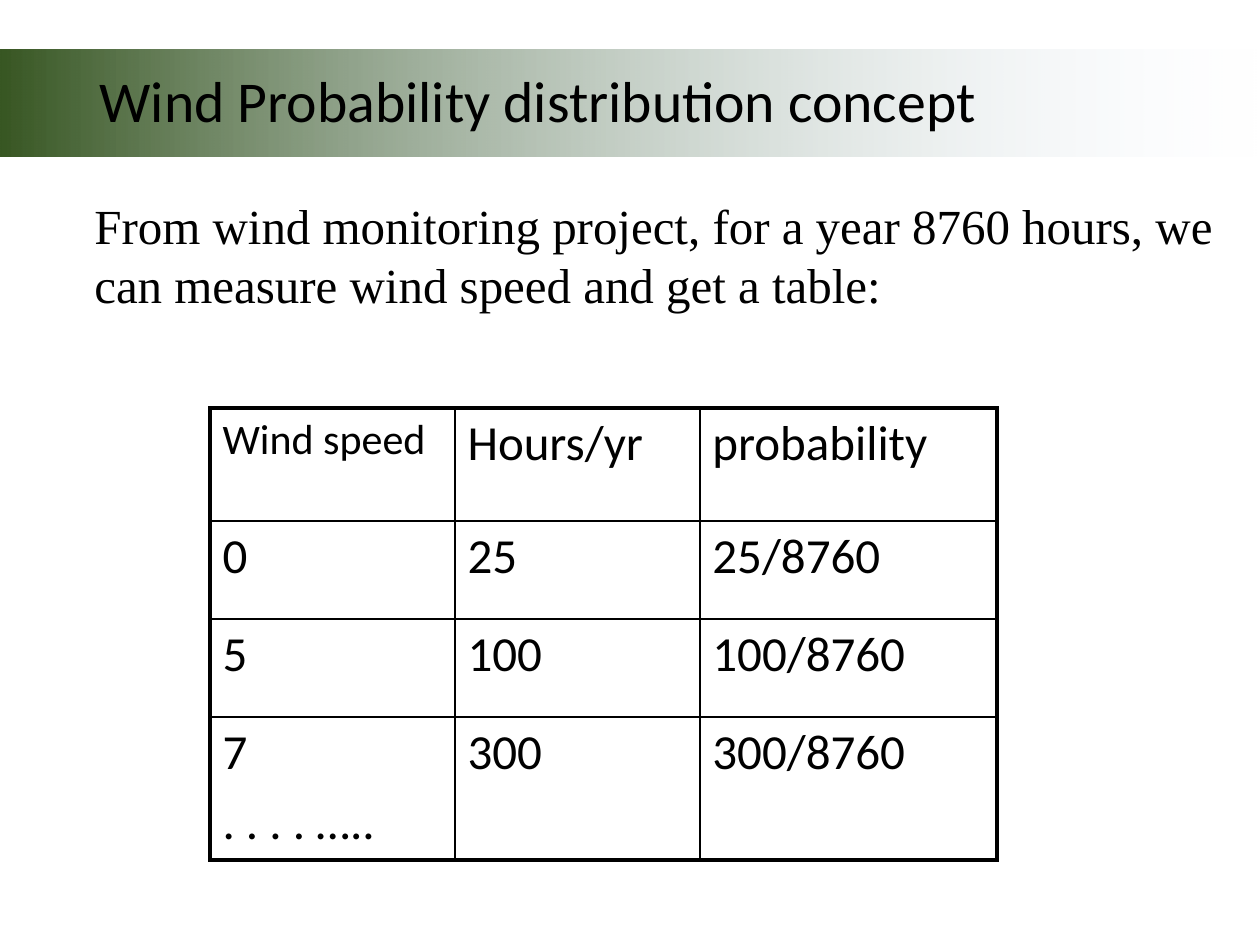
from lxml.etree import SubElement
from pptx import Presentation
from pptx.dml.color import RGBColor
from pptx.enum.shapes import MSO_SHAPE
from pptx.enum.text import MSO_ANCHOR, PP_ALIGN
from pptx.oxml.ns import qn
from pptx.util import Emu, Pt

COLORS = {"ink": "000000", "green": "385723", "mist": "E1EBFB"}
PX_PER_INCH = 126
THIN, THICK = 1, 2.25
ROWS = [
    ["Wind speed", "Hours/yr", "probability"],
    ["0", "25", "25/8760"],
    ["5", "100", "100/8760"],
    ["7\n. . . . …..", "300", "300/8760"],
]
COL_WIDTHS = [245, 245, 297]
ROW_HEIGHTS = [113, 98, 98, 143]


def px(n):
    return Emu(round(n * 914400 / PX_PER_INCH))


def box(*lengths):
    return [px(n) for n in lengths]


def rgb(name):
    return RGBColor.from_string(COLORS[name])


def write(tf, text, size=28, font="Calibri", color="ink", before=0.2,
          spacing=None, anchor=MSO_ANCHOR.TOP):
    """Fill a text frame, one paragraph per line; before is a share of size."""
    tf.word_wrap = True
    tf.vertical_anchor = anchor
    for i, line in enumerate(text.split("\n")):
        p = tf.add_paragraph() if i else tf.paragraphs[0]
        p.alignment = PP_ALIGN.LEFT
        p.space_before = Pt(size * before)
        if spacing:
            p.line_spacing = spacing
        r = p.add_run()
        r.text = line
        r.font.size = Pt(size)
        r.font.name = font
        r.font.color.rgb = rgb(color)


def add_band(s):
    """Add a band behind the title that fades to transparent."""
    sp = s.shapes.add_shape(MSO_SHAPE.RECTANGLE, *box(0, 50, 1260, 107))
    sp.shadow.inherit = False
    sp.line.fill.background()
    sp.fill.gradient()
    sp.fill.gradient_angle = 0
    for stop, name in zip(sp.fill.gradient_stops, ("green", "mist")):
        stop.color.rgb = rgb(name)
    last = sp._element.spPr.findall(".//" + qn("a:srgbClr"))[-1]
    SubElement(last, qn("a:alpha"), val="0")
    s.shapes._spTree.insert(2, sp._element)


def set_title(s, text):
    title = s.shapes.title
    title.left, title.top, title.width, title.height = box(87, 50, 1086, 107)
    write(title.text_frame, text, size=33, before=0, spacing=0.9,
          anchor=MSO_ANCHOR.MIDDLE)


def set_borders(cell, **widths):
    tc_pr = cell._tc.get_or_add_tcPr()
    for side, width in widths.items():
        ln = SubElement(tc_pr, qn("a:ln" + side), w=str(Pt(width)))
        fill = SubElement(ln, qn("a:solidFill"))
        SubElement(fill, qn("a:srgbClr"), val=COLORS["ink"])


def add_wind_table(s, left, top):
    n_rows, n_cols = len(ROWS), len(COL_WIDTHS)
    table = s.shapes.add_table(
        n_rows, n_cols,
        *box(left, top, sum(COL_WIDTHS), sum(ROW_HEIGHTS))).table
    table.first_row = table.horz_banding = False
    for col, width in zip(table.columns, COL_WIDTHS):
        col.width = px(width)
    for i, (row, height) in enumerate(zip(ROWS, ROW_HEIGHTS)):
        table.rows[i].height = px(height)
        for j, text in enumerate(row):
            cell = table.cell(i, j)
            write(cell.text_frame, text, size=24 if i == j == 0 else 28)
            set_borders(cell,
                        L=THICK if j == 0 else THIN,
                        R=THICK if j == n_cols - 1 else THIN,
                        T=THICK if i == 0 else THIN,
                        B=THICK if i == n_rows - 1 else THIN)
            cell.fill.background()


def main():
    prs = Presentation()
    prs.slide_width, prs.slide_height = box(1260, 945)
    s = prs.slides.add_slide(prs.slide_layouts[5])
    add_band(s)
    set_title(s, "Wind Probability distribution concept")
    intro = s.shapes.add_textbox(*box(82, 189, 1157, 131))
    write(intro.text_frame,
          "From wind monitoring project, for a year 8760 hours, "
          "we can measure wind speed and get a table:",
          font="Times New Roman")
    add_wind_table(s, 210, 408)
    prs.save("out.pptx")


if __name__ == "__main__":
    main()
